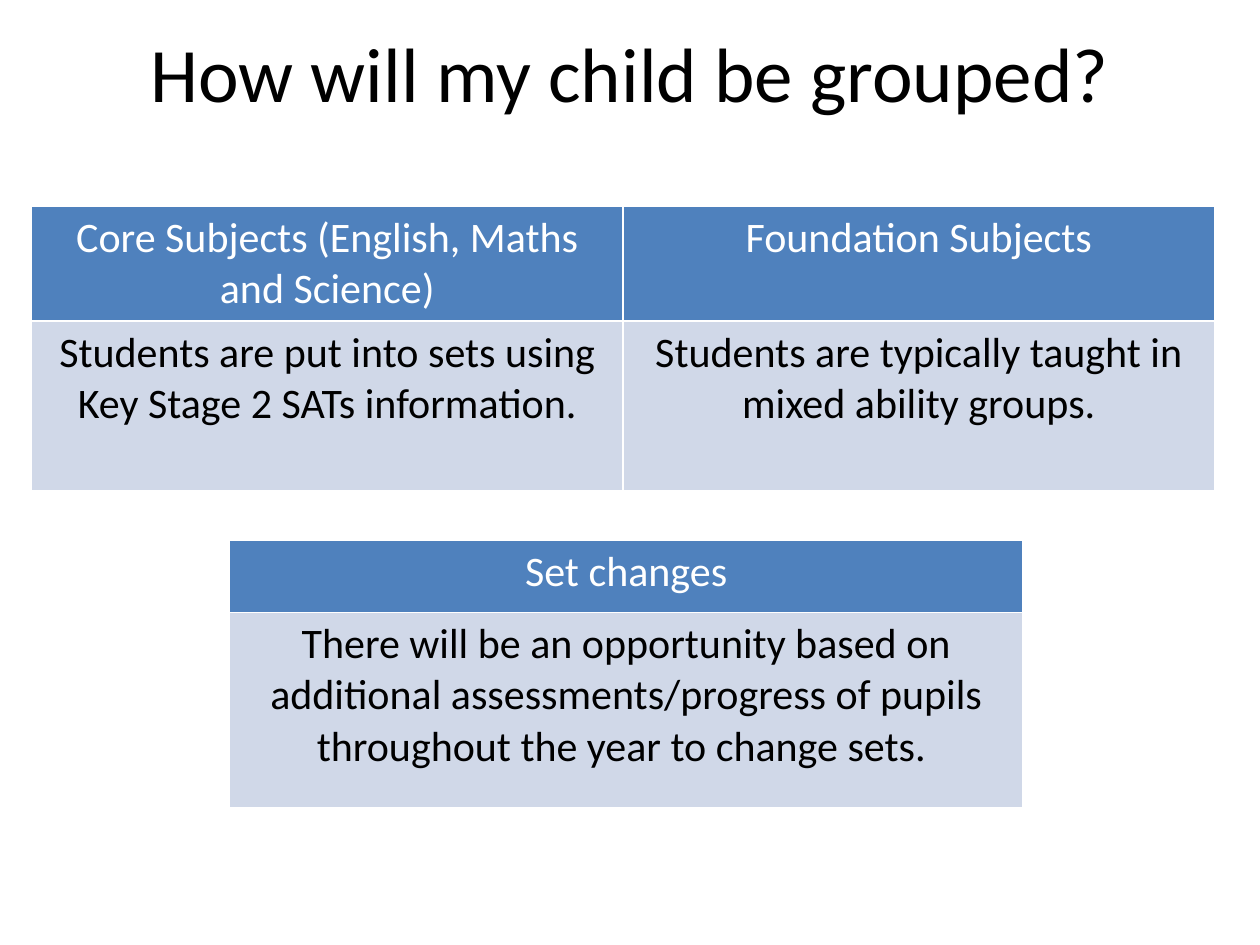
"""Build the slide that explains how pupils are grouped."""
import pptx
import pptx.dml.color
import pptx.enum.text
import pptx.util

COLOURS = {"title": "000000", "header": "4F81BD", "header_text": "FFFFFF",
           "body": "D0D8E8", "body_text": "000000"}
ROW_STYLES = ("header", "body")
TABLES = [
    {"left": 0.025, "top": 0.218, "width": 0.939, "heights": (0.121, 0.179),
     "rows": [["Core Subjects (English, Maths and Science)", "Foundation Subjects"],
              ["Students are put into sets using Key Stage 2 SATs information.",
               "Students are typically taught in mixed ability groups."]]},
    {"left": 0.182, "top": 0.572, "width": 0.63, "heights": (0.076, 0.207),
     "rows": [["Set changes"],
              ["There will be an opportunity based on additional assessments/progress "
               "of pupils throughout the year to change sets. "]]},
]


def write_text(frame, text, size, colour):
    frame.word_wrap = True
    paragraph = frame.paragraphs[0]
    paragraph.alignment = pptx.enum.text.PP_ALIGN.CENTER
    run = paragraph.add_run()
    run.text = text
    run.font.name = "Calibri"
    run.font.size = pptx.util.Pt(size)
    run.font.bold = False
    run.font.color.rgb = pptx.dml.color.RGBColor.from_string(COLOURS[colour])


presentation = pptx.Presentation()
presentation.slide_width = pptx.util.Inches(10)
presentation.slide_height = pptx.util.Inches(7.5)
width, height = presentation.slide_width, presentation.slide_height
slide = presentation.slides.add_slide(presentation.slide_layouts[5])

title = slide.shapes.title
title.left, title.top = int(width * 0.05), int(height * 0.04)
title.width, title.height = int(width * 0.9), int(height * 0.072)
title.text_frame.vertical_anchor = pptx.enum.text.MSO_ANCHOR.MIDDLE
write_text(title.text_frame, "How will my child be grouped?", size=44, colour="title")

for layout in TABLES:
    rows = layout["rows"]
    table = slide.shapes.add_table(
        len(rows), len(rows[0]), int(width * layout["left"]), int(height * layout["top"]),
        int(width * layout["width"]), int(height * sum(layout["heights"]))).table
    for row, share, texts, style in zip(table.rows, layout["heights"], rows, ROW_STYLES):
        row.height = int(height * share)
        for cell, text in zip(row.cells, texts):
            cell.fill.solid()
            cell.fill.fore_color.rgb = pptx.dml.color.RGBColor.from_string(COLOURS[style])
            write_text(cell.text_frame, text, size=24, colour=f"{style}_text")

presentation.save("out.pptx")
